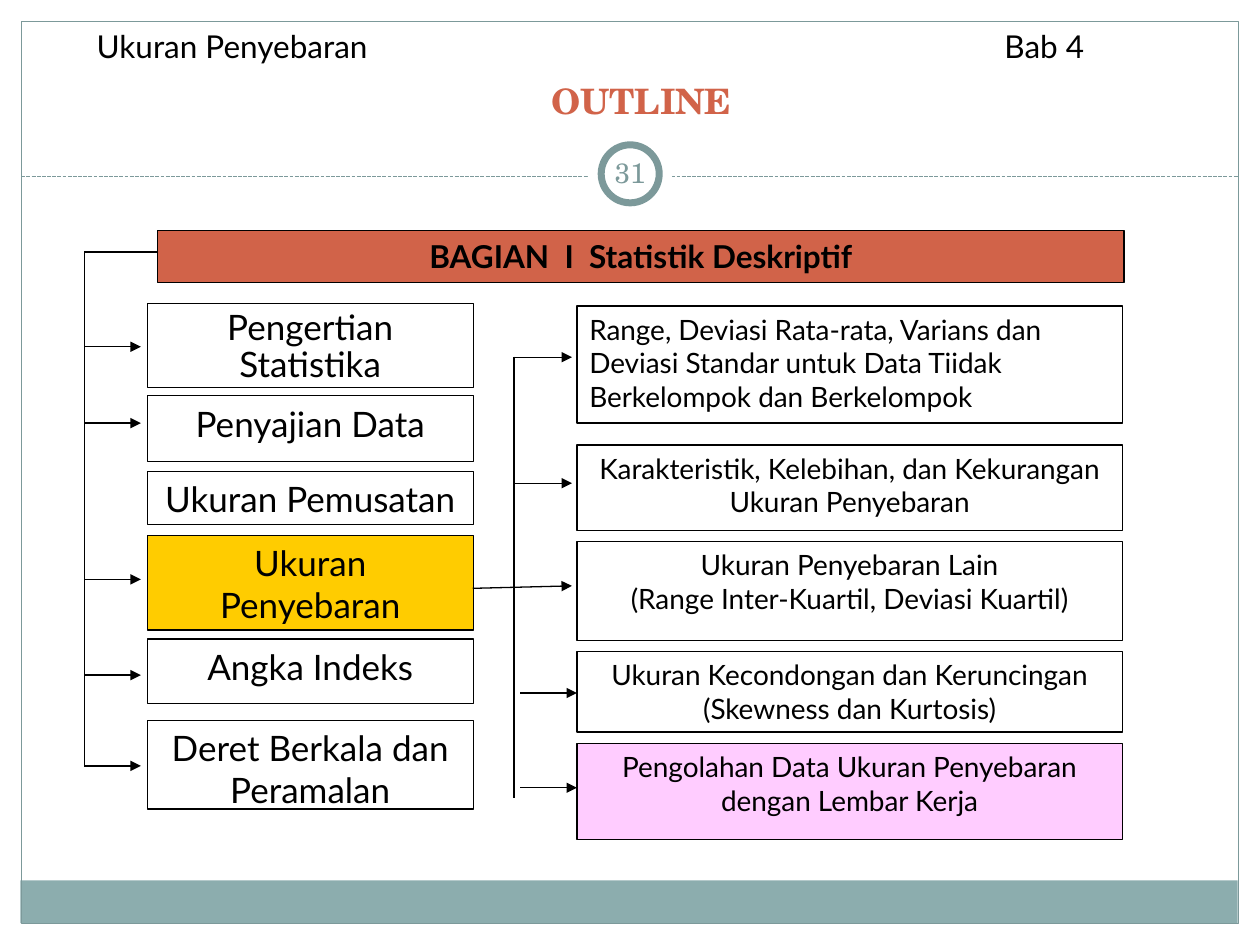
from lxml.etree import SubElement
from pptx import Presentation
from pptx.dml.color import RGBColor
from pptx.enum.dml import MSO_LINE_DASH_STYLE as Dash
from pptx.enum.shapes import MSO_CONNECTOR as Connector, MSO_SHAPE as Shape
from pptx.enum.text import MSO_ANCHOR as Anchor, MSO_AUTO_SIZE as AutoSize, PP_ALIGN as Align
from pptx.oxml.ns import qn
from pptx.util import Cm, Pt


def color(value):
    return RGBColor.from_string(value)


class OutlineSlide:
    body_font = "Lato"
    heading_font = "TeX Gyre Schola"
    ink = "000000"
    accent = "D16349"
    frame = "7C999A"
    band = "8CADAE"
    thin = 0.75

    def __init__(self, slide):
        self.slide = slide

    def set_text(self, frame, text, size, font=None, ink=None, bold=False,
                 align=Align.CENTER, anchor=Anchor.TOP, spacing=None):
        frame.text = text
        frame.word_wrap = True
        frame.auto_size = AutoSize.NONE
        frame.vertical_anchor = anchor
        for paragraph in frame.paragraphs:
            paragraph.alignment = align
            if spacing:
                paragraph.line_spacing = spacing
            for run in paragraph.runs:
                run.font.size = Pt(size)
                run.font.name = font or self.body_font
                run.font.bold = bold
                run.font.color.rgb = color(ink or self.ink)

    def title(self, text, left, top, width, height):
        heading = self.slide.shapes.title
        heading.left, heading.top = Cm(left), Cm(top)
        heading.width, heading.height = Cm(width), Cm(height)
        self.set_text(heading.text_frame, text, 20, self.heading_font, self.accent,
                      bold=True, anchor=Anchor.BOTTOM)

    def shape(self, left, top, width, height, fill=None, line=None,
              weight=thin, kind=Shape.RECTANGLE):
        outline = self.slide.shapes.add_shape(
            kind, Cm(left), Cm(top), Cm(width), Cm(height))
        outline.shadow.inherit = False
        if fill:
            outline.fill.solid()
            outline.fill.fore_color.rgb = color(fill)
        else:
            outline.fill.background()
        if line:
            outline.line.color.rgb = color(line)
            outline.line.width = Pt(weight)
        else:
            outline.line.fill.background()
        return outline

    def box(self, text, left, top, width, height, size, fill=None, **style):
        topic = self.shape(left, top, width, height, fill, self.ink)
        self.set_text(topic.text_frame, text, size, **style)

    def label(self, text, left, top, width, height, size, **style):
        caption = self.slide.shapes.add_textbox(
            Cm(left), Cm(top), Cm(width), Cm(height))
        self.set_text(caption.text_frame, text, size, **style)
        return caption.text_frame

    def line(self, x1, y1, x2, y2, ink=None, arrow=False, dash=None):
        link = self.slide.shapes.add_connector(
            Connector.STRAIGHT, Cm(x1), Cm(y1), Cm(x2), Cm(y2))
        link.line.color.rgb = color(ink or self.ink)
        link.line.width = Pt(self.thin)
        if dash:
            link.line.dash_style = dash
        properties = link._element.spPr
        if arrow:
            SubElement(properties.find(qn("a:ln")), qn("a:tailEnd"), type="triangle")
        SubElement(properties, qn("a:effectLst"))

    def backdrop(self, number):
        self.shape(0.41, 17.75, 24.54, 0.86, self.band)
        self.shape(0.43, 0.43, 24.54, 18.19, line=self.frame)
        self.line(0.43, 3.56, 24.97, 3.56, self.frame, dash=Dash.SQUARE_DOT)
        self.shape(11.85, 2.67, 1.7, 1.7, "FFFFFF", kind=Shape.OVAL)
        self.shape(12.12, 2.92, 1.17, 1.17, "FFFFFF", self.frame, 4, Shape.OVAL)
        badge = self.label(number, 12.07, 2.87, 1.27, 1.22, 16,
                           font=self.heading_font, ink=self.frame, anchor=Anchor.MIDDLE)
        badge.margin_left = badge.margin_right = Cm(0.13)

    def header(self, subject, chapter):
        running = self.label(f"{subject}\t{chapter}", 1.7, 0.43, 21.16, 1.02, 18,
                             align=Align.LEFT)
        properties = running.paragraphs[0]._p.get_or_add_pPr()
        stops = SubElement(properties, qn("a:tabLst"))
        SubElement(stops, qn("a:tab"), pos=str(Cm(18.3)), algn="l")


def main():
    deck = Presentation()
    deck.slide_width, deck.slide_height = Cm(25.4), Cm(19.05)
    outline = OutlineSlide(deck.slides.add_slide(deck.slide_layouts[5]))

    outline.backdrop("31")
    outline.title("OUTLINE", 2.11, 1.07, 21.64, 1.5)
    outline.header("Ukuran Penyebaran", "Bab 4")
    outline.box("BAGIAN  I  Statistik Deskriptif", 3.18, 4.65, 19.48, 1.04, 18,
                outline.accent, bold=True)

    chapters = [
        ("Pengertian Statistika", 6.12, 1.7, "FFFFFF", 0.9),
        ("Penyajian Data", 7.98, 1.32, "FFFFFF", None),
        ("Ukuran Pemusatan", 9.5, 1.07, "FFFFFF", None),
        ("Ukuran Penyebaran", 10.8, 1.9, "FFCC00", None),
        ("Angka Indeks", 12.88, 1.3, "FFFFFF", None),
        ("Deret Berkala dan\nPeramalan", 14.53, 1.78, "FFFFFF", None),
    ]
    for text, top, height, fill, spacing in chapters:
        outline.box(text, 2.97, top, 6.57, height, 20, fill, spacing=spacing)

    sections = [
        ("Range, Deviasi Rata-rata, Varians dan Deviasi Standar untuk Data Tiidak "
         "Berkelompok dan Berkelompok", 6.17, 2.36, None, Align.LEFT),
        ("Karakteristik, Kelebihan, dan Kekurangan Ukuran Penyebaran",
         8.97, 1.73, "FFFFFF", Align.CENTER),
        ("Ukuran Penyebaran Lain\n(Range Inter-Kuartil, Deviasi Kuartil)",
         10.92, 2, None, Align.CENTER),
        ("Ukuran Kecondongan dan Keruncingan\n(Skewness dan Kurtosis)",
         13.13, 1.63, None, Align.CENTER),
        ("Pengolahan Data Ukuran Penyebaran dengan Lembar Kerja",
         14.99, 1.93, "FFCCFF", Align.CENTER),
    ]
    for text, top, height, fill, align in sections:
        outline.box(text, 11.63, top, 11, height, 16, fill, align=align)

    outline.line(1.7, 5.08, 3.18, 5.08)
    outline.line(1.7, 5.08, 1.7, 15.44)
    for y in (6.99, 8.53, 11.68, 13.61, 15.44):
        outline.line(1.7, y, 2.84, y, arrow=True)

    outline.line(10.36, 7.19, 10.36, 16.08)
    outline.line(9.53, 11.86, 11.53, 11.81, arrow=True)
    for start, end, heights in ((10.36, 11.53, (7.2, 9.74)), (10.49, 11.63, (13.97, 15.88))):
        for y in heights:
            outline.line(start, y, end, y, arrow=True)

    deck.save("out.pptx")


if __name__ == "__main__":
    main()
